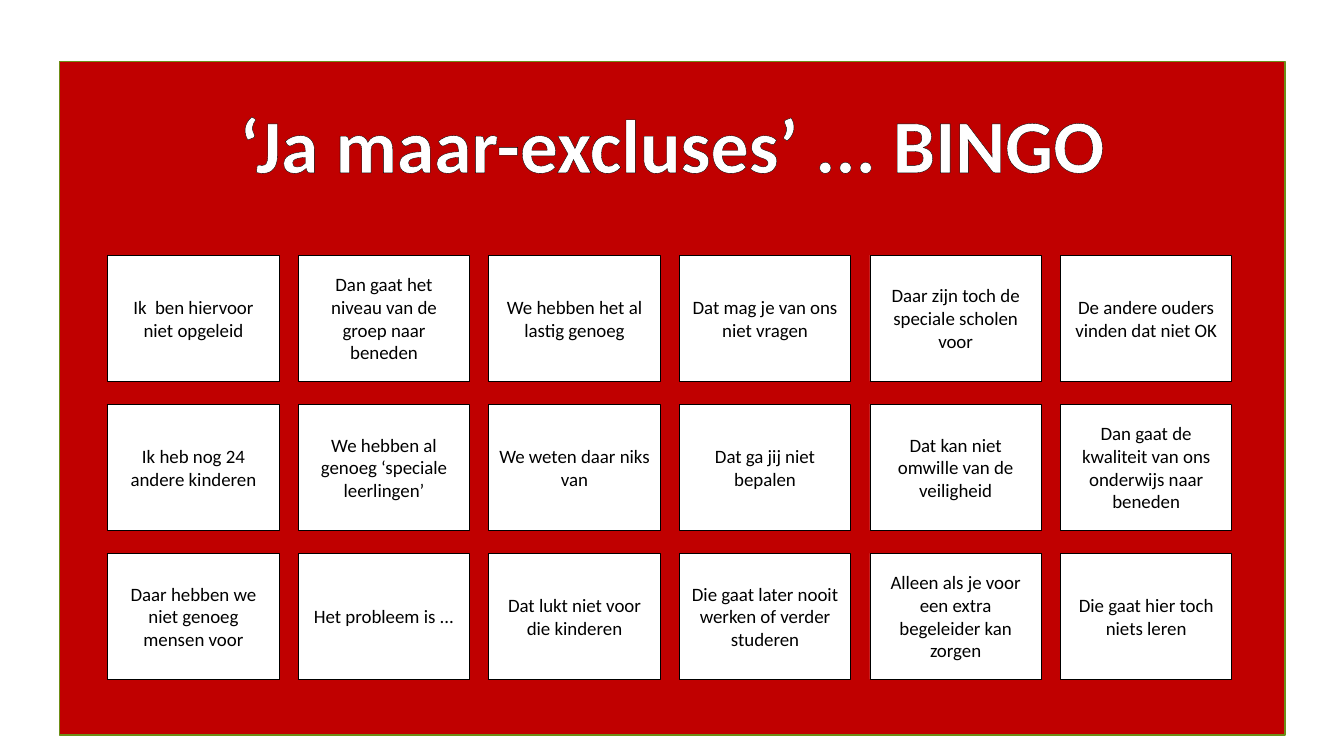
from lxml.etree import SubElement
from pptx import Presentation
from pptx.dml.color import RGBColor
from pptx.enum.shapes import MSO_SHAPE
from pptx.enum.text import MSO_ANCHOR, MSO_AUTO_SIZE, PP_ALIGN
from pptx.oxml import parse_xml
from pptx.oxml.ns import nsdecls, qn
from pptx.util import Pt

# Content
TITLE = "‘Ja maar-excluses’ ... BINGO"
EXCUSES = [
    ["Ik  ben hiervoor niet opgeleid",
     "Dan gaat het niveau van de groep naar beneden",
     "We hebben het al lastig genoeg",
     "Dat mag je van ons niet vragen",
     "Daar zijn toch de speciale scholen voor",
     "De andere ouders vinden dat niet OK"],
    ["Ik heb nog 24 andere kinderen",
     "We hebben al genoeg ‘speciale leerlingen’",
     "We weten daar niks van",
     "Dat ga jij niet bepalen",
     "Dat kan niet omwille van de veiligheid",
     "Dan gaat de kwaliteit van ons onderwijs naar beneden"],
    ["Daar hebben we niet genoeg mensen voor",
     "Het probleem is ...",
     "Dat lukt niet voor die kinderen",
     "Die gaat later nooit werken of verder studeren",
     "Alleen als je voor een extra begeleider kan zorgen",
     "Die gaat hier toch niets leren"],
]

# Style and layout, in points
FONT = "Calibri"
RED = RGBColor(0xC0, 0x00, 0x00)
GREEN = RGBColor(0x6D, 0x8E, 0x17)
WHITE = RGBColor(0xFF, 0xFF, 0xFF)
BLACK = RGBColor(0x00, 0x00, 0x00)
PANEL = (42.5, 44, 875.5, 481)
TITLE_BOX = (161.3, 65.5, 637.9, 72.7)
CARD_LEFT, CARD_TOP = 77, 182.2
CARD_WIDTH, CARD_HEIGHT = 122.4, 90
COLUMN_STEP, ROW_STEP = 136.1, 106.5

presentation = Presentation()
presentation.slide_width, presentation.slide_height = Pt(960), Pt(540)
slide = presentation.slides.add_slide(presentation.slide_layouts[5])


def add_rectangle(box, fill, line, line_width):
    shape = slide.shapes.add_shape(MSO_SHAPE.RECTANGLE, *map(Pt, box))
    shape.shadow.inherit = False
    shape.fill.solid()
    shape.fill.fore_color.rgb = fill
    shape.line.color.rgb = line
    shape.line.width = Pt(line_width)
    return shape


# Red panel
add_rectangle(PANEL, RED, GREEN, 1)

# Bingo cards
for row, excuses in enumerate(EXCUSES):
    for column, excuse in enumerate(excuses):
        card = add_rectangle(
            (CARD_LEFT + column * COLUMN_STEP, CARD_TOP + row * ROW_STEP,
             CARD_WIDTH, CARD_HEIGHT), WHITE, BLACK, 0.5)
        card.text_frame.word_wrap = True
        card.text_frame.vertical_anchor = MSO_ANCHOR.MIDDLE
        card.text_frame.text = excuse
        paragraph = card.text_frame.paragraphs[0]
        paragraph.alignment = PP_ALIGN.CENTER
        paragraph.font.name = FONT
        paragraph.font.size = Pt(13.5)
        paragraph.font.color.rgb = BLACK

# Title, brought in front of the panel
title = slide.shapes.title
title.left, title.top, title.width, title.height = map(Pt, TITLE_BOX)
slide.shapes._spTree.append(title._element)
frame = title.text_frame
frame.text = TITLE
frame.word_wrap = False
frame.auto_size = MSO_AUTO_SIZE.SHAPE_TO_FIT_TEXT
frame.vertical_anchor = MSO_ANCHOR.MIDDLE
paragraph = frame.paragraphs[0]
paragraph.alignment = PP_ALIGN.CENTER
run = paragraph.runs[0]
run.font.name = FONT
run.font.size = Pt(54)
run.font.bold = True
run.font.color.rgb = WHITE

# Black outline around the title letters
outline = parse_xml(f'<a:ln {nsdecls("a")} w="{Pt(1)}"/>')
outline_fill = SubElement(outline, qn("a:solidFill"))
SubElement(outline_fill, qn("a:srgbClr"), val=str(BLACK))
run._r.get_or_add_rPr().insert(0, outline)

presentation.save("out.pptx")
